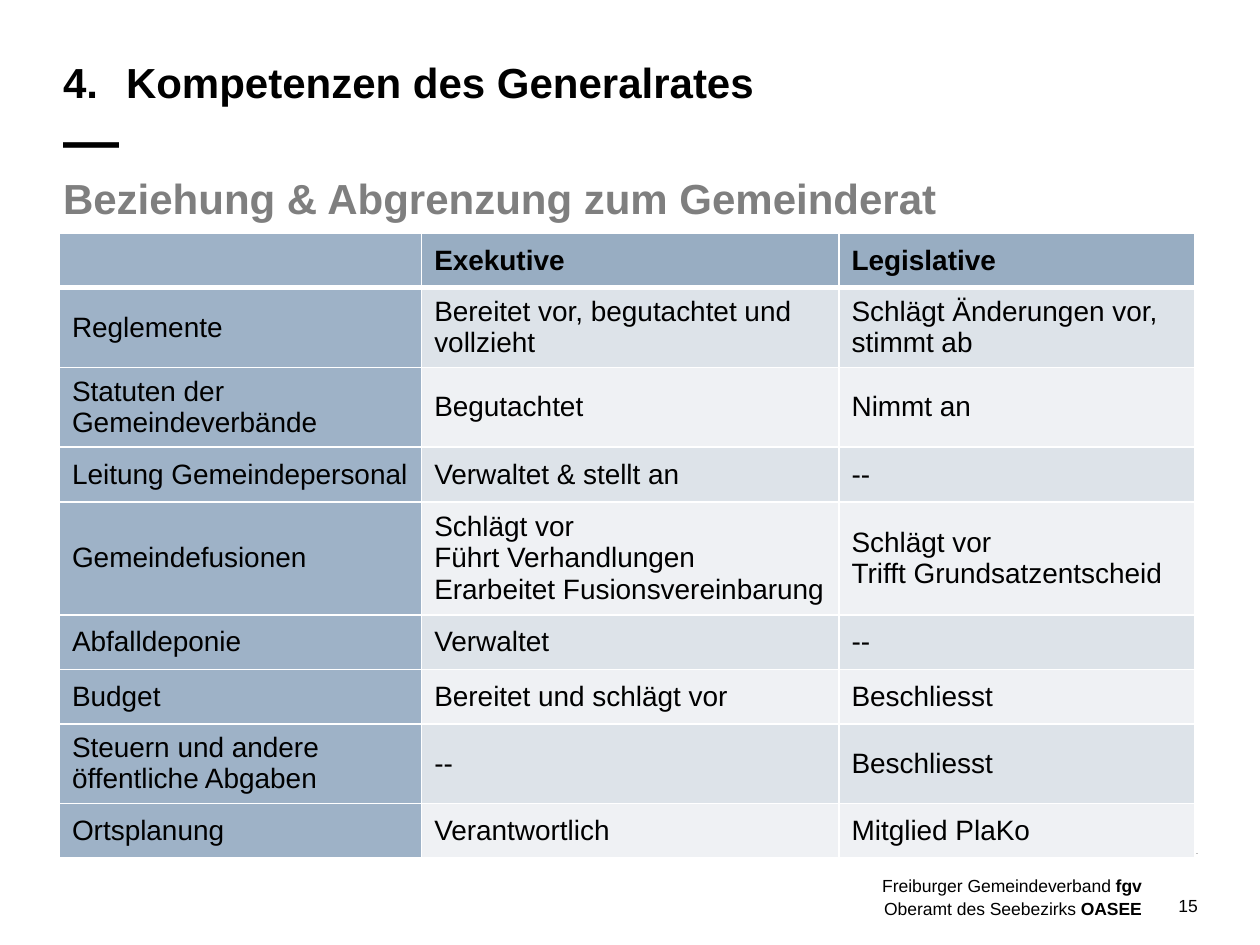
from lxml import etree
from pptx import Presentation
from pptx import util as u
from pptx.dml.color import RGBColor
from pptx.enum import shapes, text
from pptx.oxml import ns

COLORS = {
    "text": "000000", "subtitle": "7F7F7F", "rule": "C0C0C0", "border": "FFFFFF",
    "label": "9EB2C7", "header": "98ADC2", "odd": "DDE3E9", "even": "EFF1F4",
}
COLUMN_WIDTHS = [207, 238.5, 203.5]
LINE_HEIGHTS = {1: 31.2, 2: 45.6, 3: 64.6}
ROWS = [
    (1, "", "Exekutive", "Legislative"),
    (2, "Reglemente", "Bereitet vor, begutachtet und vollzieht", "Schlägt Änderungen vor, stimmt ab"),
    (2, "Statuten der Gemeindeverbände", "Begutachtet", "Nimmt an"),
    (1, "Leitung Gemeindepersonal", "Verwaltet & stellt an", "--"),
    (3, "Gemeindefusionen", "Schlägt vor\nFührt Verhandlungen\nErarbeitet Fusionsvereinbarung",
     "Schlägt vor\nTrifft Grundsatzentscheid"),
    (1, "Abfalldeponie", "Verwaltet", "--"),
    (1, "Budget", "Bereitet und schlägt vor", "Beschliesst"),
    (2, "Steuern und andere öffentliche Abgaben", "--", "Beschliesst"),
    (1, "Ortsplanung", "Verantwortlich", "Mitglied PlaKo"),
]


def color(name):
    return RGBColor.from_string(COLORS[name])


def add_text(paragraph, content, size=16, bold=False, fill="text"):
    run = paragraph.add_run()
    run.text = content
    run.font.name = "Arial"
    run.font.size = u.Pt(size)
    run.font.bold = bold
    run.font.color.rgb = color(fill)


def prepare_frame(shape):
    frame = shape.text_frame
    frame.margin_left = frame.margin_top = frame.margin_right = frame.margin_bottom = 0
    frame.word_wrap = True
    frame.auto_size = text.MSO_AUTO_SIZE.NONE
    frame.vertical_anchor = text.MSO_ANCHOR.TOP
    return frame


def add_frame(slide, left, top, width, height):
    box = slide.shapes.add_textbox(u.Pt(left), u.Pt(top), u.Pt(width), u.Pt(height))
    return prepare_frame(box)


def place_title(slide, left, top, width, height):
    title = slide.shapes.title
    title.left, title.top = u.Pt(left), u.Pt(top)
    title.width, title.height = u.Pt(width), u.Pt(height)
    paragraph = prepare_frame(title).paragraphs[0]
    paragraph.alignment = text.PP_ALIGN.LEFT
    paragraph.line_spacing = u.Pt(37)
    tabs = etree.SubElement(paragraph._p.get_or_add_pPr(), ns.qn("a:tabLst"))
    etree.SubElement(tabs, ns.qn("a:tab"), pos=str(u.Pt(36)), algn="l")
    add_text(paragraph, "4.\tKompetenzen des Generalrates", size=24, bold=True)
    paragraph.add_line_break()
    add_text(paragraph, "—", size=32, bold=True)


def place_subtitle(slide, left, top, width, height):
    paragraph = add_frame(slide, left, top, width, height).paragraphs[0]
    paragraph.space_after = u.Pt(6)
    add_text(paragraph, "Beziehung & Abgrenzung zum Gemeinderat", size=24, bold=True, fill="subtitle")


def place_footer(slide, left, top, width, height):
    rule = slide.shapes.add_connector(
        shapes.MSO_CONNECTOR.STRAIGHT, u.Pt(left), u.Pt(top), u.Pt(left + width), u.Pt(top))
    rule.line.color.rgb = color("rule")
    rule.line.width = u.Pt(0.25)
    etree.SubElement(rule._element.spPr, ns.qn("a:effectLst"))

    number_width = 32
    names_width = 156
    names_left = left + width - number_width - names_width
    frame = add_frame(slide, names_left, top + 11, names_width, height - 11)
    organisations = [("Freiburger Gemeindeverband ", "fgv"), ("Oberamt des Seebezirks ", "OASEE")]
    for index, (name, short_name) in enumerate(organisations):
        paragraph = frame.add_paragraph() if index else frame.paragraphs[0]
        paragraph.alignment = text.PP_ALIGN.RIGHT
        paragraph.line_spacing = u.Pt(13.4)
        add_text(paragraph, name, size=10)
        add_text(paragraph, short_name, size=10, bold=True)

    number = add_frame(slide, left + width - number_width, top + 23.8, number_width, 12)
    number.paragraphs[0].alignment = text.PP_ALIGN.RIGHT
    add_text(number.paragraphs[0], "15", size=10)


def set_borders(cell, bottom, top):
    properties = cell._tc.get_or_add_tcPr()
    for side, width in (("L", 1), ("R", 1), ("T", top), ("B", bottom)):
        line = etree.SubElement(properties, ns.qn(f"a:ln{side}"), w=str(u.Pt(width)))
        solid = etree.SubElement(line, ns.qn("a:solidFill"))
        etree.SubElement(solid, ns.qn("a:srgbClr"), val=COLORS["border"])


def fill_cell(cell, content, fill, bold=False, top=1, bottom=1):
    set_borders(cell, bottom, top)
    cell.fill.solid()
    cell.fill.fore_color.rgb = color(fill)
    cell.vertical_anchor = text.MSO_ANCHOR.MIDDLE
    for index, line in enumerate(content.split("\n") if content else []):
        paragraph = cell.text_frame.add_paragraph() if index else cell.text_frame.paragraphs[0]
        add_text(paragraph, line, bold=bold)


def place_competences(slide, left, top):
    heights = [LINE_HEIGHTS[row[0]] for row in ROWS]
    table = slide.shapes.add_table(
        len(ROWS), len(COLUMN_WIDTHS), u.Pt(left), u.Pt(top),
        u.Pt(sum(COLUMN_WIDTHS)), u.Pt(sum(heights))).table
    for column, width in zip(table.columns, COLUMN_WIDTHS):
        column.width = u.Pt(width)
    for row_index, (_, *contents) in enumerate(ROWS):
        table.rows[row_index].height = u.Pt(heights[row_index])
        header = row_index == 0
        band = "header" if header else "odd" if row_index % 2 else "even"
        for column_index, content in enumerate(contents):
            fill_cell(
                table.cell(row_index, column_index), content,
                fill=band if column_index else "label", bold=header,
                top=3 if row_index == 1 else 1, bottom=3 if header else 1)


def main():
    presentation = Presentation()
    presentation.slide_width, presentation.slide_height = u.Pt(720), u.Pt(540)
    slide = presentation.slides.add_slide(presentation.slide_layouts[5])
    place_footer(slide, 35.5, 487.4, 649, 36)
    place_title(slide, 36, 24, 649, 75)
    place_subtitle(slide, 36, 98.6, 649, 29)
    place_competences(slide, 34, 133.2)
    presentation.save("out.pptx")


if __name__ == "__main__":
    main()
